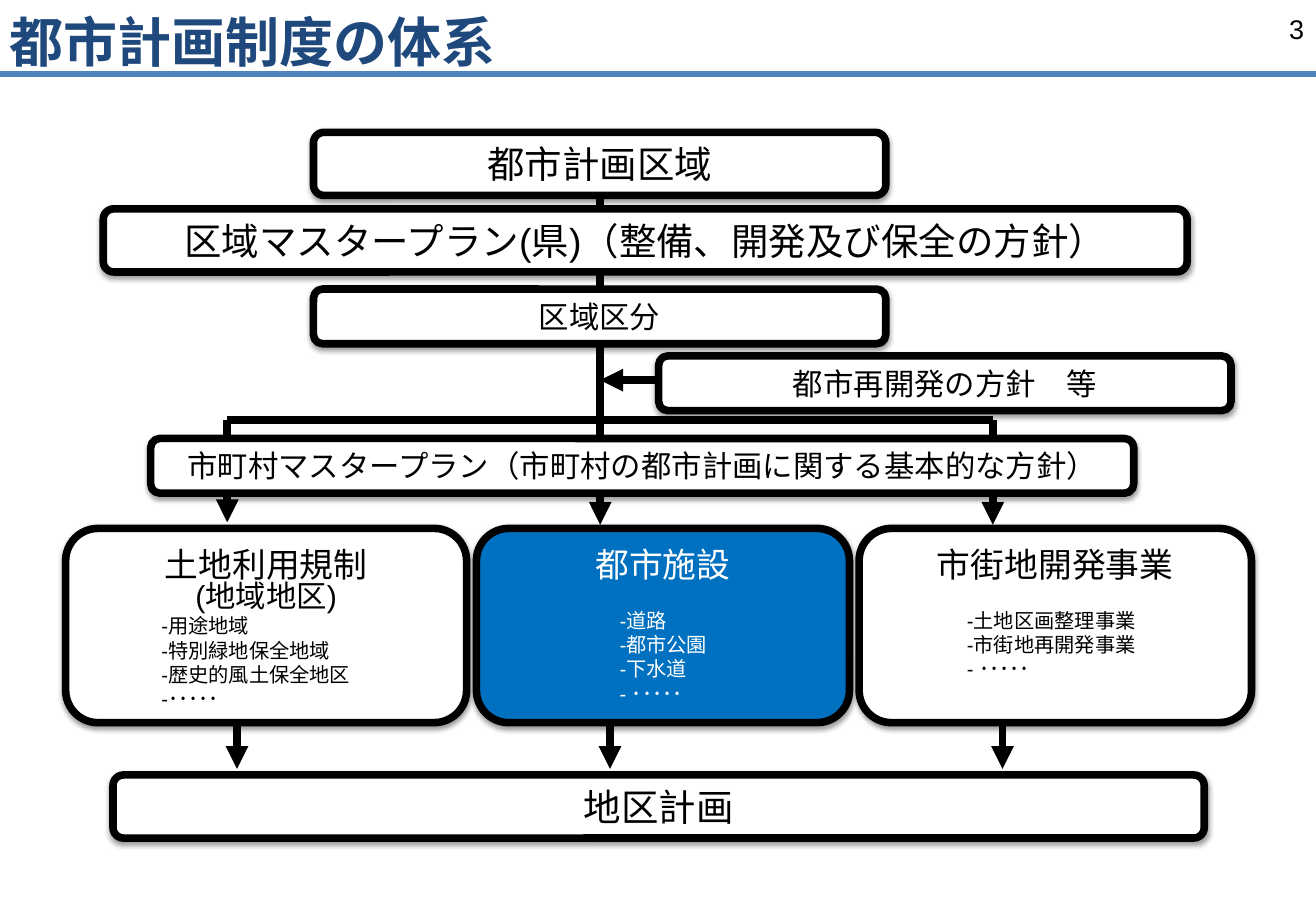
from dataclasses import dataclass

from lxml.etree import SubElement
from pptx import Presentation
from pptx.dml.color import RGBColor
from pptx.enum.shapes import MSO_CONNECTOR, MSO_SHAPE
from pptx.enum.text import MSO_ANCHOR as Anchor, PP_ALIGN as Align
from pptx.oxml.ns import qn
from pptx.slide import Slide
from pptx.util import Emu, Inches, Pt

BLACK = RGBColor(0x00, 0x00, 0x00)
WHITE = RGBColor(0xFF, 0xFF, 0xFF)
NAVY = RGBColor(0x1F, 0x49, 0x7D)
RULE_BLUE = RGBColor(0x4F, 0x81, 0xBD)
FACILITY_BLUE = RGBColor(0x00, 0x70, 0xC0)

SLIDE_WIDTH, SLIDE_HEIGHT = Inches(10.83), Inches(7.5)
GRID = 100  # columns across and rows down the slide

HEAVY = 4.5
TALL, LOW = 6.93, 6
LARGE, MEDIUM = 22.2, 18
CENTRAL_LEFT, CENTRAL_WIDTH = 23.82, 43.49
CARD_TOP, CARD_HEIGHT = 58, 21.33
TRUNK, BRANCH_LEFT, BRANCH_RIGHT = 45.61, 17.27, 75.44
BRANCH_ROW, BRANCH_END = 46.13, 57.6


@dataclass(frozen=True)
class Step:
    text: str
    left: float
    top: float
    width: float
    height: float
    size: float


@dataclass(frozen=True)
class Card:
    title: str
    subtitle: str
    items: tuple[str, ...]
    left: float
    width: float
    indent: float
    fill: RGBColor = WHITE
    ink: RGBColor = BLACK


@dataclass(frozen=True)
class Link:
    start: tuple[float, float]
    end: tuple[float, float]
    arrow: bool = True
    color: RGBColor = BLACK
    weight: float = HEAVY


DISTRICT_PLAN = Step("地区計画", 8.59, 85.07, 82.92, TALL, LARGE)
REDEVELOPMENT = Step("都市再開発の方針　等", 50.05, 39.07, CENTRAL_WIDTH, LOW, MEDIUM)
UPPER_STEPS = (
    Step("市町村マスタープラン（市町村の都市計画に関する基本的な方針）",
         11.45, 48.13, 74.7, LOW, MEDIUM),
    Step("区域区分", CENTRAL_LEFT, 31.73, CENTRAL_WIDTH, LOW, MEDIUM),
    Step("都市計画区域", CENTRAL_LEFT, 14.53, CENTRAL_WIDTH, TALL, LARGE),
    Step("区域マスタープラン(県)（整備、開発及び保全の方針）",
         7.85, 22.93, 82.36, TALL, LARGE),
)
CARDS = (
    Card("土地利用規制", "(地域地区)",
         ("-用途地域", "-特別緑地保全地域", "-歴史的風土保全地区", "-･････"),
         4.99, 30.47, 6.37),
    Card("都市施設", "", ("-道路", "-都市公園", "-下水道", "- ･････"),
         36.2, 28.35, 9.97, FACILITY_BLUE, WHITE),
    Card("市街地開発事業", "", ("-土地区画整理事業", "-市街地再開発事業", "- ･････"),
         65.28, 29.82, 7.29),
)
LINKS = (
    Link((49.95, 41.73), (TRUNK, 41.73)),
    *(Link((column, 79.2), (column, 84.4)) for column in (18.01, 46.35, 76.18)),
    Link((BRANCH_LEFT, BRANCH_ROW), (BRANCH_LEFT, 57.33)),
    Link((BRANCH_RIGHT, BRANCH_ROW), (BRANCH_RIGHT, BRANCH_END)),
    Link((BRANCH_LEFT, BRANCH_ROW), (BRANCH_RIGHT, BRANCH_ROW), arrow=False),
    Link((TRUNK, 21.07), (TRUNK, BRANCH_END)),
)


def columns(count: float) -> Emu:
    return Emu(round(SLIDE_WIDTH * count / GRID))


def rows(count: float) -> Emu:
    return Emu(round(SLIDE_HEIGHT * count / GRID))


def area(left: float, top: float, width: float, height: float) -> tuple[Emu, ...]:
    return columns(left), rows(top), columns(width), rows(height)


def style(para, size: float, color: RGBColor, align: Align, face: str = "Arial") -> None:
    para.alignment = align
    para.font.size = Pt(size)
    para.font.name = face
    para.font.color.rgb = color


def add_box(slide: Slide, place: tuple[Emu, ...], fill: RGBColor):
    """Add a heavy-edged rounded box with a soft shadow below it."""
    box = slide.shapes.add_shape(MSO_SHAPE.ROUNDED_RECTANGLE, *place)
    box.fill.solid()
    box.fill.fore_color.rgb = fill
    box.line.color.rgb = BLACK
    box.line.width = Pt(HEAVY)
    box.shadow.inherit = False
    effects = box._element.spPr.find(qn("a:effectLst"))
    shadow = SubElement(effects, qn("a:outerShdw"), blurRad=str(Pt(3.1)),
                        dist=str(Pt(1.6)), dir="5400000", rotWithShape="0")
    color = SubElement(shadow, qn("a:srgbClr"), val=str(BLACK))
    SubElement(color, qn("a:alpha"), val="38000")
    box.text_frame.word_wrap = True
    return box


def add_step(slide: Slide, step: Step) -> None:
    box = add_box(slide, area(step.left, step.top, step.width, step.height), WHITE)
    box.text_frame.vertical_anchor = Anchor.MIDDLE
    para = box.text_frame.paragraphs[0]
    para.text = step.text
    style(para, step.size, BLACK, Align.CENTER)


def add_card(slide: Slide, card: Card) -> None:
    box = add_box(slide, area(card.left, CARD_TOP, card.width, CARD_HEIGHT), card.fill)
    frame = box.text_frame
    frame.vertical_anchor = Anchor.TOP
    frame.margin_left = frame.margin_right = Inches(0.02)
    heading = frame.paragraphs[0]
    heading.text = card.title
    style(heading, 20, card.ink, Align.CENTER)
    if card.subtitle:
        para = frame.add_paragraph()
        para.text = card.subtitle
        para.line_spacing = 0.8
        style(para, 18, card.ink, Align.CENTER)
    for index, item in enumerate(card.items):
        para = frame.add_paragraph()
        para.text = item
        style(para, 12, card.ink, Align.LEFT)
        para._p.get_or_add_pPr().set("marL", str(columns(card.indent)))
        if index == 0 and not card.subtitle:
            para.space_before = Pt(14)


def add_link(slide: Slide, link: Link) -> None:
    (left, top), (right, bottom) = link.start, link.end
    line = slide.shapes.add_connector(MSO_CONNECTOR.STRAIGHT, columns(left), rows(top),
                                      columns(right), rows(bottom))
    line.line.color.rgb = link.color
    line.line.width = Pt(link.weight)
    if link.arrow:
        SubElement(line.line._get_or_add_ln(), qn("a:tailEnd"), type="triangle")
    SubElement(line._element.spPr, qn("a:effectLst"))


def add_header(slide: Slide) -> None:
    title = slide.shapes.title
    title.left, title.top, title.width, title.height = area(-0.18, 0, 91.23, 9.07)
    title.text_frame.vertical_anchor = Anchor.MIDDLE
    para = title.text_frame.paragraphs[0]
    para.text = "都市計画制度の体系"
    style(para, 32, NAVY, Align.LEFT, "Calibri")
    para.font.bold = True

    page_number = slide.shapes.add_textbox(*area(76.64, 0.67, 23.36, 5.33))
    page_number.text_frame.word_wrap = True
    para = page_number.text_frame.paragraphs[0]
    para.text = "3"
    style(para, 16, BLACK, Align.RIGHT)
    add_link(slide, Link((0, 8.13), (GRID, 8.13), False, RULE_BLUE, 3))


def main() -> None:
    deck = Presentation()
    deck.slide_width, deck.slide_height = SLIDE_WIDTH, SLIDE_HEIGHT
    slide = deck.slides.add_slide(deck.slide_layouts.get_by_name("Title Only"))
    add_header(slide)
    add_step(slide, DISTRICT_PLAN)
    for card in CARDS:
        add_card(slide, card)
    add_step(slide, REDEVELOPMENT)
    for link in LINKS:
        add_link(slide, link)
    for step in UPPER_STEPS:
        add_step(slide, step)
    deck.save("out.pptx")


if __name__ == "__main__":
    main()
